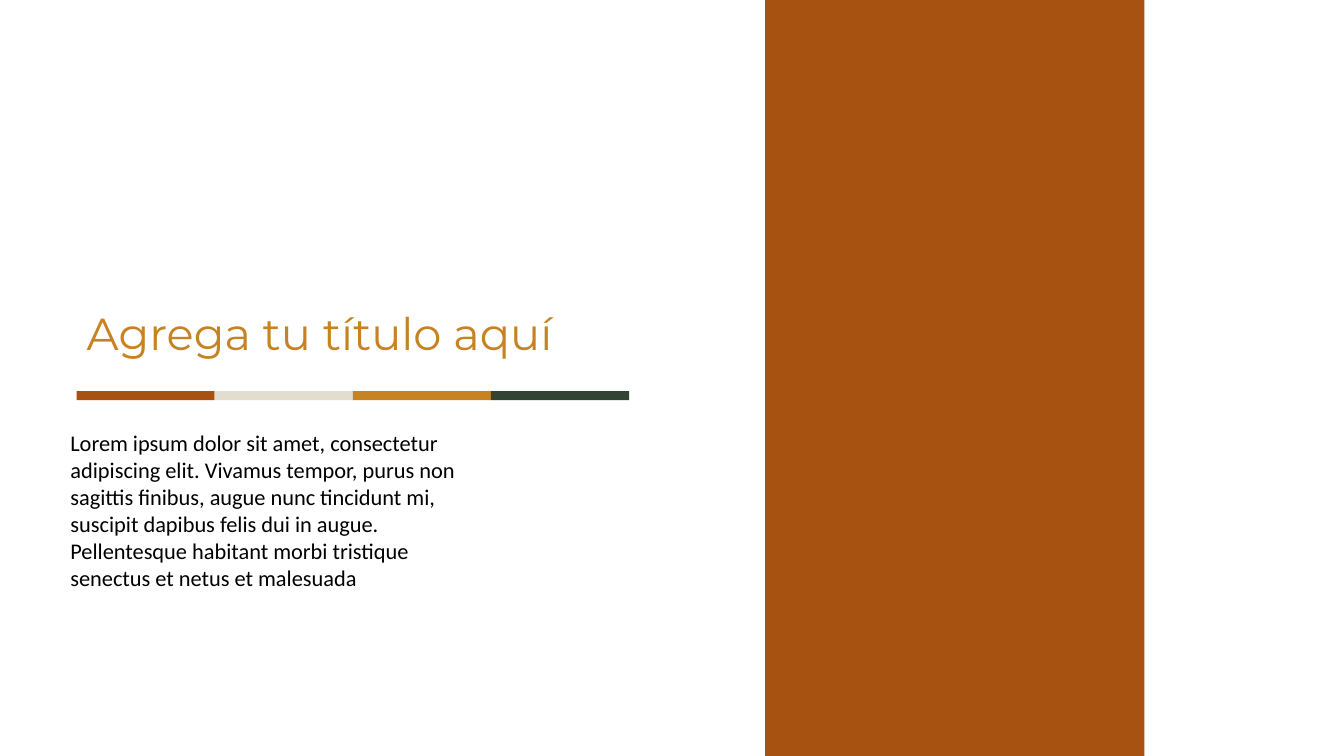
import pptx
import pptx.util
import pptx.dml.color
import pptx.enum.shapes
import pptx.enum.text

Inches = pptx.util.Inches
Pt = pptx.util.Pt
RGBColor = pptx.dml.color.RGBColor

RUST = RGBColor(0xA7, 0x52, 0x11)
CREAM = RGBColor(0xE1, 0xDE, 0xCF)
OCHRE = RGBColor(0xC7, 0x83, 0x22)
GREEN = RGBColor(0x32, 0x44, 0x36)
BLACK = RGBColor(0, 0, 0)


def add_block(shapes, left, top, width, height, color):
    block = shapes.add_shape(
        pptx.enum.shapes.MSO_SHAPE.RECTANGLE,
        Inches(left), Inches(top), Inches(width), Inches(height))
    block.shadow.inherit = False
    block.fill.solid()
    block.fill.fore_color.rgb = color
    block.line.fill.background()


def write_text(box, text, font_name, size, color):
    frame = box.text_frame
    frame.word_wrap = True
    frame.auto_size = pptx.enum.text.MSO_AUTO_SIZE.SHAPE_TO_FIT_TEXT
    frame.vertical_anchor = pptx.enum.text.MSO_ANCHOR.TOP
    para = frame.paragraphs[0]
    para.text = text
    para.alignment = pptx.enum.text.PP_ALIGN.LEFT
    para.font.name = font_name
    para.font.size = Pt(size)
    para.font.color.rgb = color


deck = pptx.Presentation()
deck.slide_width = Inches(13.33)
deck.slide_height = Inches(7.5)
page = deck.slides.add_slide(deck.slide_layouts[5])

add_block(page.shapes, 7.59, 0, 3.76, 7.5, RUST)

body = page.shapes.add_textbox(Inches(0.6), Inches(4.21), Inches(4.27), Inches(1.72))
write_text(
    body,
    "Lorem ipsum dolor sit amet, consectetur adipiscing elit. Vivamus tempor, "
    "purus non sagittis finibus, augue nunc tincidunt mi, suscipit dapibus felis "
    "dui in augue. Pellentesque habitant morbi tristique senectus et netus et "
    "malesuada",
    "Calibri", 16, BLACK)

title = page.shapes.title
title.left, title.top = Inches(0.76), Inches(2.98)
title.width, title.height = Inches(5.47), Inches(0.64)
write_text(title, "Agrega tu título aquí", "Montserrat", 32, OCHRE)

stripe = page.shapes.add_group_shape()
stripe_width = 1.37
for index, color in enumerate([RUST, CREAM, OCHRE, GREEN]):
    add_block(stripe.shapes, 0.76 + index * stripe_width, 3.88, stripe_width, 0.09, color)

deck.save("out.pptx")
